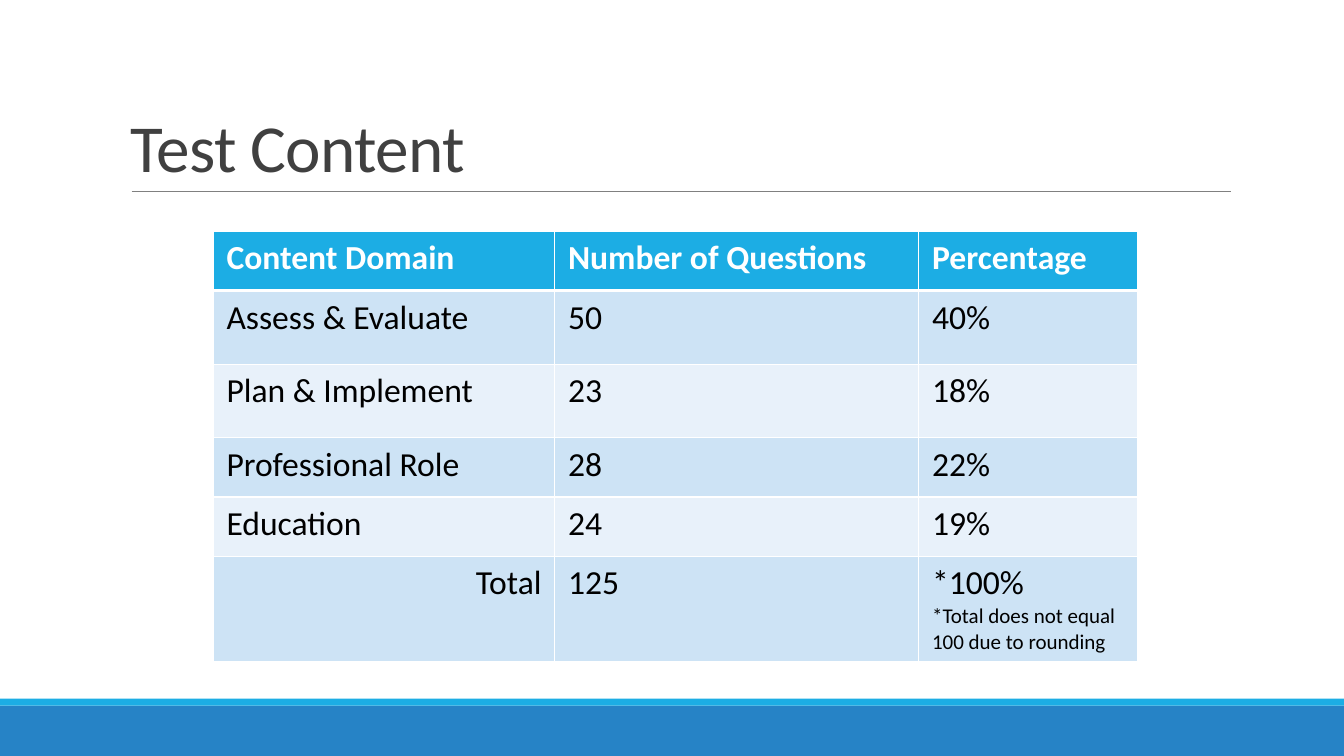
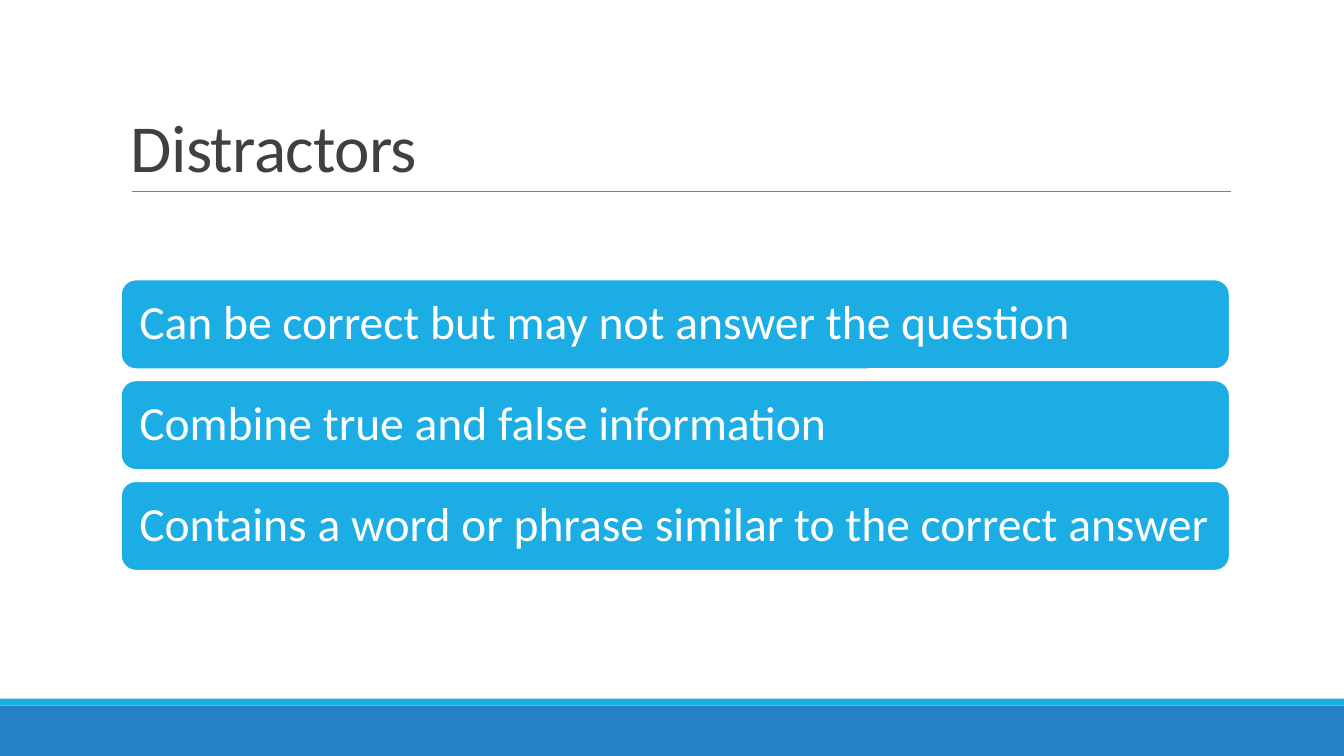
"""Build two slides on test content and distractors."""
from dataclasses import dataclass

from lxml import etree
from pptx import Presentation
from pptx.dml.color import RGBColor
from pptx.enum import shapes, text
from pptx.oxml import ns
from pptx.util import Pt


@dataclass(frozen=True)
class Theme:
    font: str = "Calibri"
    sky: str = "1CADE4"
    blue: str = "2683C6"
    pale: str = "CDE3F5"
    mist: str = "E8F1FA"
    white: str = "FFFFFF"
    black: str = "000000"
    ink: str = "404040"
    gray: str = "808080"
    head: int = 48
    bar: int = 34
    body: int = 24
    note: int = 15


THEME = Theme()
WIDE, HIGH = 960, 540
LEFT, SPAN = 86.4, 792

TABLE = {
    "title": "Test Content",
    "cols": [244, 260, 156],
    "rows": [42.4, 52.5, 52.5, 42.4, 42.4, 75],
    "cells": [
        ("Content Domain", "Number of Questions", "Percentage"),
        ("Assess & Evaluate", "50", "40%"),
        ("Plan & Implement", "23", "18%"),
        ("Professional Role", "28", "22%"),
        ("Education", "24", "19%"),
        ("Total", "125", "*100%"),
    ],
    "note": "*Total does not equal 100 due to rounding",
}
BARS = {
    "title": "Distractors",
    "items": [
        "Can be correct but may not answer the question",
        "Combine true and false information",
        "Contains a word or phrase similar to the correct answer",
    ],
}


def rgb(tone):
    return RGBColor.from_string(tone)


def style(para, size, tone, bold=False):
    font = para.font
    font.name, font.size, font.bold = THEME.font, Pt(size), bold
    font.color.rgb = rgb(tone)


def inset(item, side, edge):
    item.margin_left = item.margin_right = Pt(side)
    item.margin_top = item.margin_bottom = Pt(edge)


def block(slide, kind, box, fill, line=None):
    shape = slide.shapes.add_shape(kind, *map(Pt, box))
    shape.shadow.inherit = False
    shape.fill.solid()
    shape.fill.fore_color.rgb = rgb(fill)
    if line:
        shape.line.color.rgb = rgb(line)
        shape.line.width = Pt(1.25)
    else:
        shape.line.fill.background()
    return shape


def start(deck, title):
    slide = deck.slides.add_slide(deck.slide_layouts[6])
    rect = shapes.MSO_SHAPE.RECTANGLE
    block(slide, rect, (0, 504, WIDE, 36), THEME.blue)
    block(slide, rect, (0, 499, WIDE, 5), THEME.sky)
    ends = map(Pt, (94, 136.8, 879, 136.8))
    rule = slide.shapes.add_connector(shapes.MSO_CONNECTOR.STRAIGHT, *ends)
    rule.line.color.rgb = rgb(THEME.gray)
    rule.line.width = Pt(0.5)
    etree.SubElement(rule._element.spPr, ns.qn("a:effectLst"))
    frame = slide.shapes.add_textbox(*map(Pt, (LEFT, 22.6, SPAN, 114.2))).text_frame
    frame.word_wrap = True
    frame.vertical_anchor = text.MSO_ANCHOR.BOTTOM
    para = frame.paragraphs[0]
    para.text, para.line_spacing = title, 0.85
    style(para, THEME.head, THEME.ink)
    para.font._rPr.set("spc", "-50")
    return slide


def border(cell, top, base):
    props = cell._tc.get_or_add_tcPr()
    for spot, (side, width) in enumerate(zip("LRTB", (1, 1, top, base))):
        line = etree.Element(ns.qn("a:ln" + side), w=str(Pt(width)))
        fill = etree.SubElement(line, ns.qn("a:solidFill"))
        etree.SubElement(fill, ns.qn("a:srgbClr"), val=THEME.white)
        props.insert(spot, line)


def grid(slide, data):
    cols, rows, cells = data["cols"], data["rows"], data["cells"]
    box = map(Pt, (152.3, 165.2, sum(cols), sum(rows)))
    table = slide.shapes.add_table(len(rows), len(cols), *box).table
    for col, width in zip(table.columns, cols):
        col.width = Pt(width)
    for row, high in zip(table.rows, rows):
        row.height = Pt(high)
    for r, words in enumerate(cells):
        fill = (THEME.pale if r % 2 else THEME.mist) if r else THEME.sky
        for c, word in enumerate(words):
            cell = table.cell(r, c)
            cell.fill.solid()
            cell.fill.fore_color.rgb = rgb(fill)
            inset(cell, 9.5, 4.8)
            border(cell, 3 if r == 1 else 1, 1 if r else 3)
            para = cell.text_frame.paragraphs[0]
            para.text = word
            style(para, THEME.body, THEME.black if r else THEME.white, not r)
    last = len(rows) - 1
    total = table.cell(last, 0).text_frame.paragraphs[0]
    total.alignment = text.PP_ALIGN.RIGHT
    note = table.cell(last, len(cols) - 1).text_frame.add_paragraph()
    note.text = data["note"]
    style(note, THEME.note, THEME.black)


def stack(slide, items, top=199.7, high=64, step=72):
    for i, item in enumerate(items):
        box = (LEFT, top + i * step, SPAN, high)
        kind = shapes.MSO_SHAPE.ROUNDED_RECTANGLE
        frame = block(slide, kind, box, THEME.sky, THEME.white).text_frame
        frame.word_wrap = True
        frame.vertical_anchor = text.MSO_ANCHOR.MIDDLE
        inset(frame, 10, 10)
        para = frame.paragraphs[0]
        para.text, para.line_spacing = item, 0.9
        para.alignment = text.PP_ALIGN.LEFT
        style(para, THEME.bar, THEME.white)


def main():
    deck = Presentation()
    deck.slide_width, deck.slide_height = Pt(WIDE), Pt(HIGH)
    grid(start(deck, TABLE["title"]), TABLE)
    stack(start(deck, BARS["title"]), BARS["items"])
    deck.save("out.pptx")


if __name__ == "__main__":
    main()
